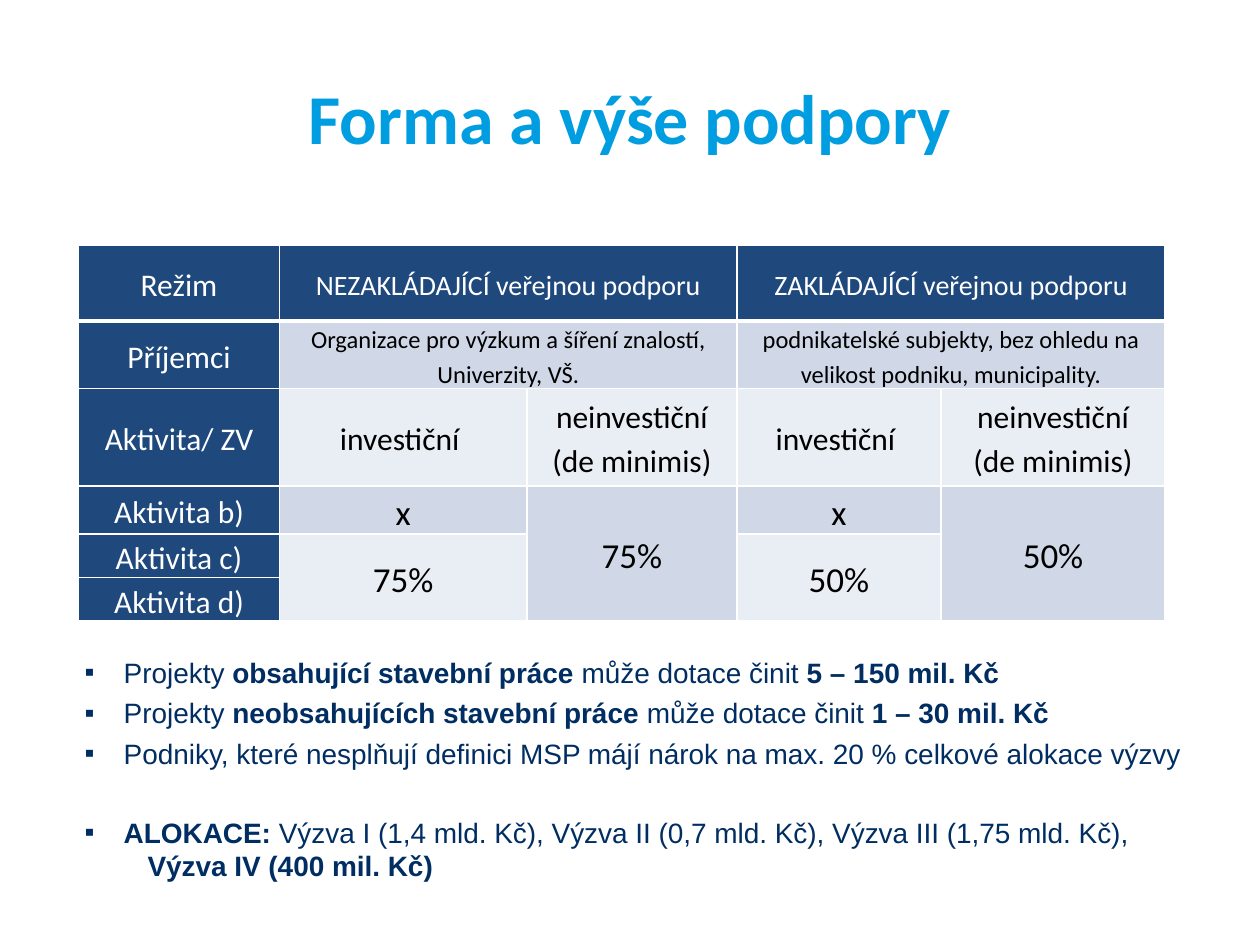
from lxml.etree import SubElement
from pptx import Presentation
from pptx.dml.color import RGBColor
from pptx.enum.text import MSO_ANCHOR as Anchor, MSO_AUTO_SIZE as AutoSize, PP_ALIGN as Align
from pptx.oxml.ns import qn
from pptx.util import Cm, Pt

SKY = RGBColor(0x00, 0x9D, 0xE0)
INK = RGBColor(0x00, 0x2D, 0x62)
NAVY = RGBColor(0x1F, 0x49, 0x7D)
BAND = RGBColor(0xD0, 0xD8, 0xE8)
PALE = RGBColor(0xE9, 0xED, 0xF4)
WHITE = RGBColor(0xFF, 0xFF, 0xFF)
BLACK = RGBColor(0, 0, 0)

COLUMN_WIDTHS = [4.06, 4.98, 4.24, 4.11, 4.52]
ROW_HEIGHTS = [1.52, 1.22, 1.96, 0.86, 0.79, 0.79]
ROW_LABELS = ["Režim", "Příjemci", "Aktivita/ ZV", "Aktivita b)", "Aktivita c)", "Aktivita d)"]
# row, column, rows spanned, columns spanned, text, size, colour, fill
VALUE_CELLS = [
    (0, 1, 1, 2, "NEZAKLÁDAJÍCÍ veřejnou podporu", 16, WHITE, NAVY),
    (0, 3, 1, 2, "ZAKLÁDAJÍCÍ veřejnou podporu", 16, WHITE, NAVY),
    (1, 1, 1, 2, "Organizace pro výzkum a šíření znalostí, Univerzity, VŠ.", 14, BLACK, BAND),
    (1, 3, 1, 2, "podnikatelské subjekty, bez ohledu na velikost podniku, municipality.",
     14, BLACK, BAND),
]
for first_column, rate in ((1, "75%"), (3, "50%")):
    VALUE_CELLS += [
        (2, first_column, 1, 1, "investiční ", 18, BLACK, PALE),
        (2, first_column + 1, 1, 1, "neinvestiční\n(de minimis)", 18, BLACK, PALE),
        (3, first_column, 1, 1, "x", 20, BLACK, BAND),
        (3, first_column + 1, 3, 1, rate, 20, BLACK, BAND),
        (4, first_column, 2, 1, rate, 20, BLACK, PALE),
    ]

# space before in points, has bullet, runs of (text, bold)
NOTES = [
    (0, True, [("Projekty ", False), ("obsahující stavební práce ", True),
               ("může dotace činit ", False), ("5 – 150 mil. Kč", True)]),
    (4, True, [("Projekty ", False), ("neobsahujících stavební práce ", True),
               ("může dotace činit ", False), ("1 – 30 mil. Kč", True)]),
    (4, True, [("Podniky, které nesplňují definici MSP májí nárok na max. 20 % "
                "celkové alokace výzvy", False)]),
    (26, True, [("ALOKACE: ", True),
                ("Výzva I (1,4 mld. Kč), Výzva II (0,7 mld. Kč), Výzva III (1,75 mld. Kč),", False)]),
    (0, False, [("Výzva IV (400 mil. Kč)", True)]),
]


def apply_format(target, values):
    for name, value in values.items():
        setattr(target, name, value)


def format_run(run, name, size, color, bold=False):
    apply_format(run.font, {"name": name, "size": Pt(size), "bold": bold})
    run.font.color.rgb = color


def place(shape, box):
    apply_format(shape, dict(zip(("left", "top", "width", "height"), box)))


def add_title(slide, box):
    title = slide.shapes.title
    place(title, box)
    title.text_frame.vertical_anchor = Anchor.MIDDLE
    paragraph = title.text_frame.paragraphs[0]
    paragraph.alignment = Align.CENTER
    run = paragraph.add_run()
    run.text = "Forma a výše podpory"
    format_run(run, "Calibri", 40, SKY, True)


def set_borders(cell, bottom_width):
    """Draw white lines on all sides; call before the cell gets its fill."""
    properties = cell._tc.get_or_add_tcPr()
    for side, width in (("L", 1), ("R", 1), ("T", 1), ("B", bottom_width)):
        line = SubElement(properties, qn(f"a:ln{side}"), w=str(Pt(width)))
        fill = SubElement(line, qn("a:solidFill"))
        SubElement(fill, qn("a:srgbClr"), val=str(WHITE))


def fill_cell(cell, text, size, color, fill):
    apply_format(cell, {"margin_left": Cm(0.13), "margin_right": Cm(0.13), "margin_top": 0,
                        "margin_bottom": 0, "vertical_anchor": Anchor.MIDDLE})
    cell.fill.solid()
    cell.fill.fore_color.rgb = fill
    cell.text = text
    for paragraph in cell.text_frame.paragraphs:
        apply_format(paragraph, {"alignment": Align.CENTER, "line_spacing": 1.15})
        for run in paragraph.runs:
            format_run(run, "Calibri", size, color)


def add_support_table(slide, box):
    table = slide.shapes.add_table(len(ROW_HEIGHTS), len(COLUMN_WIDTHS), *box).table
    for column, width in zip(table.columns, COLUMN_WIDTHS):
        column.width = Cm(width)
    for row, height in zip(table.rows, ROW_HEIGHTS):
        row.height = Cm(height)
    for row_index, row in enumerate(table.rows):
        for cell in row.cells:
            set_borders(cell, 3 if row_index == 0 else 1)
    for row_index, label in enumerate(ROW_LABELS):
        fill_cell(table.cell(row_index, 0), label, 18, WHITE, NAVY)
    for row, column, row_span, column_span, *content in VALUE_CELLS:
        cell = table.cell(row, column)
        if row_span * column_span > 1:
            cell.merge(table.cell(row + row_span - 1, column + column_span - 1))
        fill_cell(cell, *content)


def set_bullet(paragraph, has_bullet):
    properties = paragraph._p.get_or_add_pPr()
    if has_bullet:
        indent, hanging = Cm(0.79), -Cm(0.79)
        SubElement(properties, qn("a:buFont"), typeface="Arial")
        SubElement(properties, qn("a:buChar"), char="▪")
    else:
        indent, hanging = Cm(1.27), 0
        SubElement(properties, qn("a:buNone"))
    properties.set("marL", str(indent))
    properties.set("indent", str(hanging))


def add_notes_list(slide, box):
    body = slide.placeholders[1]
    place(body, box)
    frame = body.text_frame
    apply_format(frame, {"word_wrap": True, "auto_size": AutoSize.SHAPE_TO_FIT_TEXT})
    for index, (space_before, has_bullet, runs) in enumerate(NOTES):
        paragraph = frame.add_paragraph() if index else frame.paragraphs[0]
        set_bullet(paragraph, has_bullet)
        paragraph.space_before = Pt(space_before)
        for text, bold in runs:
            run = paragraph.add_run()
            run.text = text
            format_run(run, "Arial", 16, INK, bold)


def main():
    presentation = Presentation()
    presentation.slide_width, presentation.slide_height = Cm(25.4), Cm(19.05)
    slide = presentation.slides.add_slide(presentation.slide_layouts[1])
    add_title(slide, (Cm(1.27), Cm(0.76), Cm(22.86), Cm(3.18)))
    add_support_table(slide, (Cm(1.58), Cm(4.95), Cm(sum(COLUMN_WIDTHS)), Cm(sum(ROW_HEIGHTS))))
    add_notes_list(slide, (Cm(1.45), Cm(13.08), Cm(23.06), Cm(6.6)))
    presentation.save("out.pptx")


if __name__ == "__main__":
    main()
